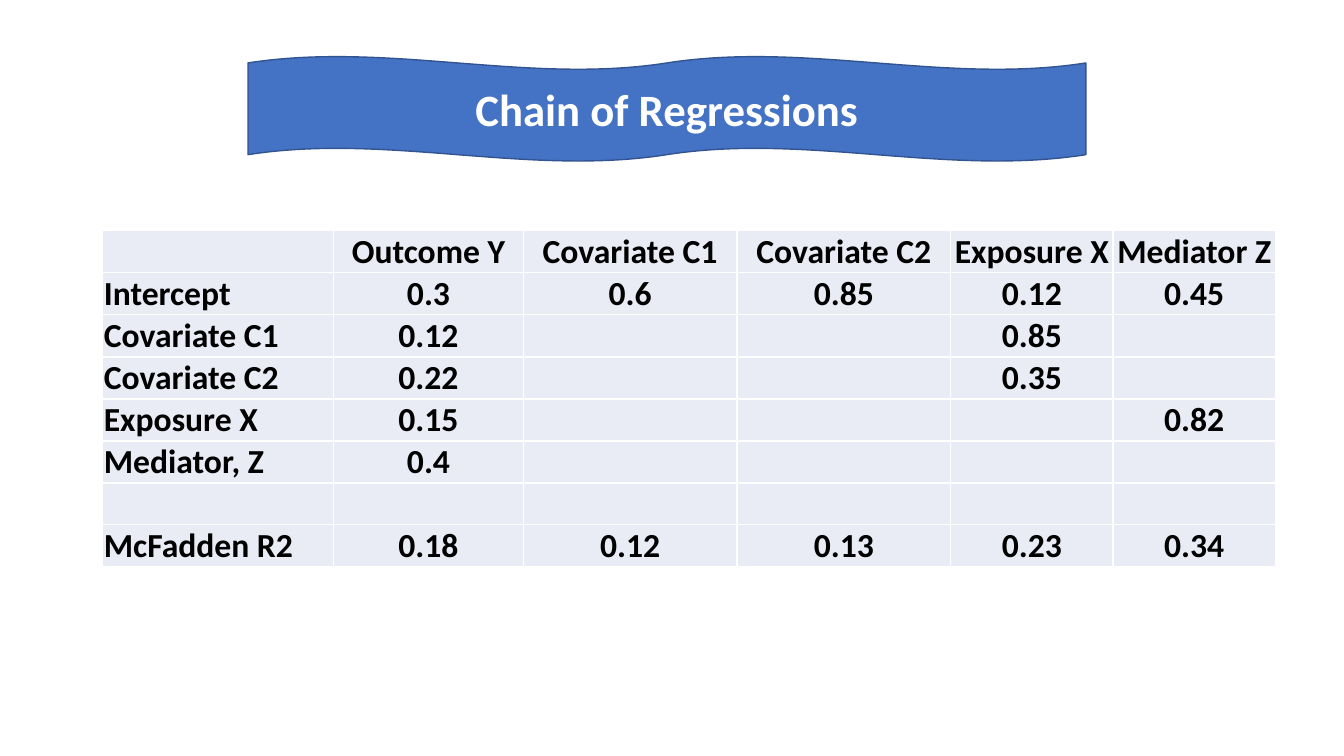
"""Build the Chain of Regressions slide with its coefficient table."""
import pptx
import pptx.util
import pptx.dml.color
import pptx.enum.shapes
import pptx.enum.text
import pptx.oxml
import pptx.oxml.ns

Inches = pptx.util.Inches
Pt = pptx.util.Pt
ALIGN = pptx.enum.text.PP_ALIGN
ANCHOR = pptx.enum.text.MSO_ANCHOR

TITLE = "Chain of Regressions"
ROWS = [
    ("", "Outcome Y", "Covariate C1", "Covariate C2", "Exposure X", "Mediator Z"),
    ("Intercept", "0.3", "0.6", "0.85", "0.12", "0.45"),
    ("Covariate C1", "0.12", "", "", "0.85", ""),
    ("Covariate C2", "0.22", "", "", "0.35", ""),
    ("Exposure X", "0.15", "", "", "", "0.82"),
    ("Mediator, Z", "0.4", "", "", "", ""),
    ("", "", "", "", "", ""),
    ("McFadden R2", "0.18", "0.12", "0.13", "0.23", "0.34"),
]
COL_WIDTHS = (2.29, 1.88, 2.12, 2.12, 1.61, 1.61)
ROW_HEIGHT = 0.41
COLORS = {"banner": "4472C4", "outline": "325491", "cell": "E9EBF5",
          "white": "FFFFFF", "black": "000000"}


def rgb(name):
    return pptx.dml.color.RGBColor.from_string(COLORS[name])


def write(tf, text, size=24, color="black", align=ALIGN.CENTER):
    p = tf.paragraphs[0]
    p.alignment = align
    r = p.add_run()
    r.text = text
    r.font.name = "Calibri"
    r.font.size = Pt(size)
    r.font.bold = True
    r.font.color.rgb = rgb(color)


def add_borders(cell):
    tc_pr = cell._tc.get_or_add_tcPr()
    for side in ("lnL", "lnR", "lnT", "lnB"):
        tc_pr.append(pptx.oxml.parse_xml(
            f'<a:{side} {pptx.oxml.ns.nsdecls("a")} w="{Pt(1)}"><a:solidFill>'
            f'<a:srgbClr val="{COLORS["white"]}"/></a:solidFill></a:{side}>'))


def add_banner(s):
    sp = s.shapes.add_shape(pptx.enum.shapes.MSO_SHAPE.DOUBLE_WAVE,
                            Inches(2.46), Inches(0.56), Inches(8.31), Inches(1.04))
    sp.shadow.inherit = False
    sp.fill.solid()
    sp.fill.fore_color.rgb = rgb("banner")
    sp.line.color.rgb = rgb("outline")
    sp.line.width = Pt(1)
    sp.text_frame.vertical_anchor = ANCHOR.MIDDLE
    write(sp.text_frame, TITLE, size=32, color="white")


def add_coefficients(s):
    table = s.shapes.add_table(
        len(ROWS), len(COL_WIDTHS), Inches(1.02), Inches(2.29),
        Inches(sum(COL_WIDTHS)), Inches(ROW_HEIGHT * len(ROWS))).table
    table.first_row = table.horz_banding = False
    for col, width in zip(table.columns, COL_WIDTHS):
        col.width = Inches(width)
    for i, values in enumerate(ROWS):
        table.rows[i].height = Inches(ROW_HEIGHT)
        for j, text in enumerate(values):
            cell = table.cell(i, j)
            add_borders(cell)
            cell.fill.solid()
            cell.fill.fore_color.rgb = rgb("cell")
            cell.vertical_anchor = ANCHOR.BOTTOM
            cell.margin_left = cell.margin_right = cell.margin_top = Inches(0.01)
            cell.margin_bottom = 0
            if text:
                write(cell.text_frame, text, align=ALIGN.CENTER if j else ALIGN.LEFT)


def main():
    prs = pptx.Presentation()
    prs.slide_width, prs.slide_height = Inches(13.33), Inches(7.5)
    s = prs.slides.add_slide(prs.slide_layouts[6])
    add_banner(s)
    add_coefficients(s)
    prs.save("out.pptx")


if __name__ == "__main__":
    main()
